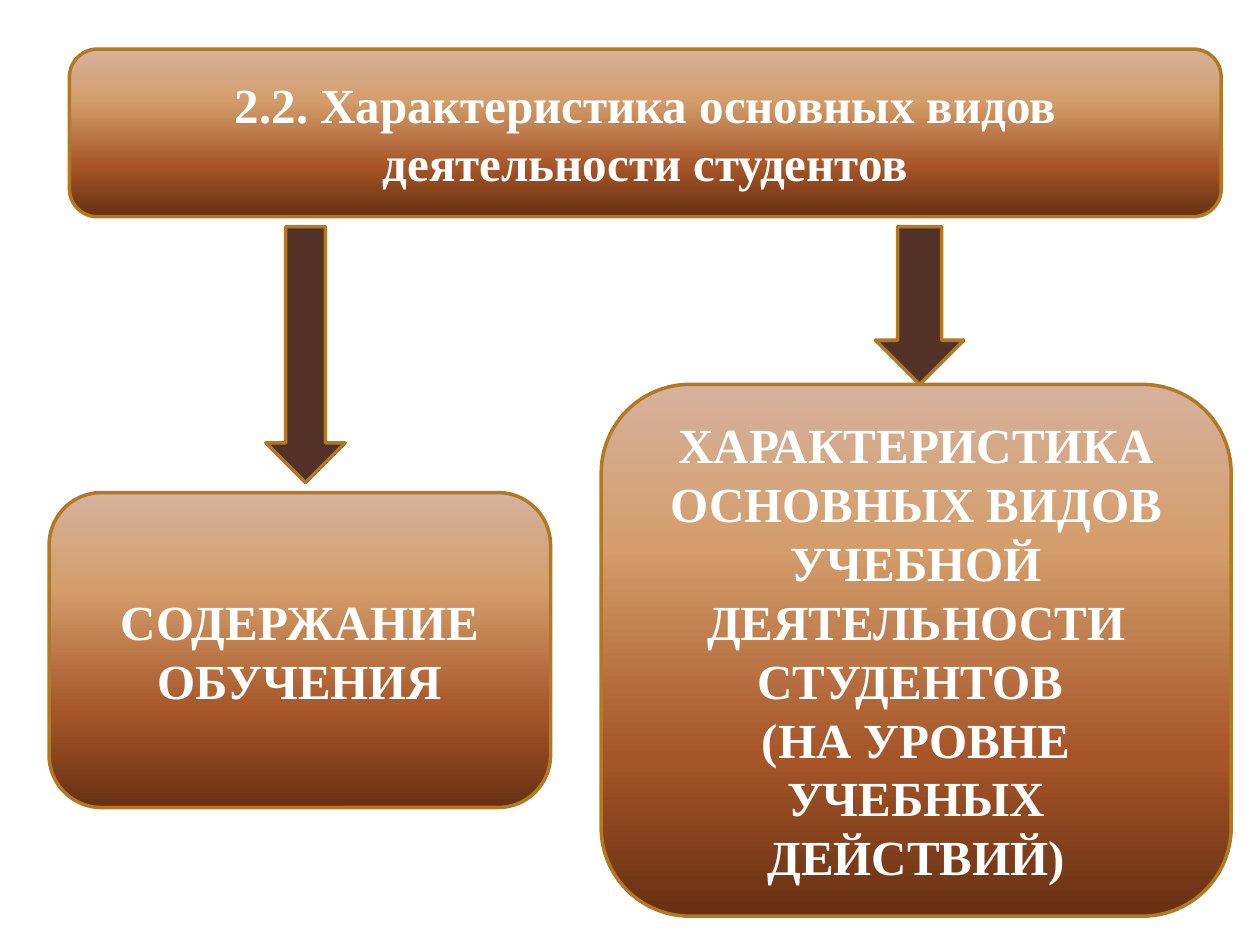
from copy import deepcopy
from dataclasses import dataclass

from pptx import Presentation
from pptx.dml.color import RGBColor
from pptx.enum.shapes import MSO_SHAPE
from pptx.enum.text import MSO_ANCHOR, PP_ALIGN
from pptx.oxml.ns import qn
from pptx.util import Cm, Pt

ROUNDED = MSO_SHAPE.ROUNDED_RECTANGLE
DOWN_ARROW = MSO_SHAPE.DOWN_ARROW
MIDDLE = MSO_ANCHOR.MIDDLE
CENTER = PP_ALIGN.CENTER

COLORS = {
    "border": "B27822",
    "arrow": "523227",
    "text": "FFFFFF",
    "sand": "D6B19C",
    "tan": "D49E6C",
    "rust": "A65528",
    "umber": "663012",
}
GRADIENT = [(0, "sand"), (0.3, "tan"), (0.7, "rust"), (1, "umber")]
ARROW_TOP = 4.57


@dataclass
class Box:
    left: float
    top: float
    width: float
    height: float
    paragraphs: tuple[str, ...] = ()


HEADING = Box(1.4, 0.99, 23.22, 3.38,
              ("2.2. Характеристика основных видов деятельности студентов",))
CONTENT = Box(0.99, 9.93, 10.11, 6.35, ("СОДЕРЖАНИЕ ОБУЧЕНИЯ",))
ACTIVITIES = Box(12.12, 7.75, 12.7, 10.72, (
    "ХАРАКТЕРИСТИКА ОСНОВНЫХ ВИДОВ УЧЕБНОЙ ДЕЯТЕЛЬНОСТИ СТУДЕНТОВ ",
    "(НА УРОВНЕ УЧЕБНЫХ ДЕЙСТВИЙ)",
))
ARROWS = [Box(5.36, ARROW_TOP, 1.6, 5.16), Box(17.65, ARROW_TOP, 1.78, 3.18)]


def color(name: str) -> RGBColor:
    return RGBColor.from_string(COLORS[name])


def add_outlined(slide, kind, box: Box):
    shape = slide.shapes.add_shape(
        kind, Cm(box.left), Cm(box.top), Cm(box.width), Cm(box.height))
    shape.shadow.inherit = False
    shape.line.color.rgb = color("border")
    shape.line.width = Pt(2)
    return shape


def fill_gradient(shape) -> None:
    shape.fill.gradient()
    shape.fill.gradient_angle = 270  # counter-clockwise: light at the top
    # The default gradient has two stops; add the missing ones
    stop_list = shape.fill._xPr.find(qn("a:gradFill")).find(qn("a:gsLst"))
    while len(stop_list) < len(GRADIENT):
        stop_list.append(deepcopy(stop_list[0]))
    for stop, (position, name) in zip(shape.fill.gradient_stops, GRADIENT):
        stop.position = position
        stop.color.rgb = color(name)


def add_panel(slide, box: Box) -> None:
    shape = add_outlined(slide, ROUNDED, box)
    fill_gradient(shape)
    frame = shape.text_frame
    frame.word_wrap = True
    frame.vertical_anchor = MIDDLE
    frame.text = "\n".join(box.paragraphs)
    for paragraph in frame.paragraphs:
        paragraph.alignment = CENTER
        font = paragraph.font
        font.name = "Times New Roman"
        font.size = Pt(28)
        font.bold = True
        font.color.rgb = color("text")


def add_arrow(slide, box: Box) -> None:
    shape = add_outlined(slide, DOWN_ARROW, box)
    shape.fill.solid()
    shape.fill.fore_color.rgb = color("arrow")


def main() -> None:
    presentation = Presentation()
    presentation.slide_width = Cm(25.4)
    presentation.slide_height = Cm(19.05)
    slide = presentation.slides.add_slide(presentation.slide_layouts[6])

    # Arrows go behind the panels they point to
    for arrow in ARROWS:
        add_arrow(slide, arrow)

    # Heading and its two parts
    for panel in (HEADING, CONTENT, ACTIVITIES):
        add_panel(slide, panel)

    presentation.save("out.pptx")


if __name__ == "__main__":
    main()
